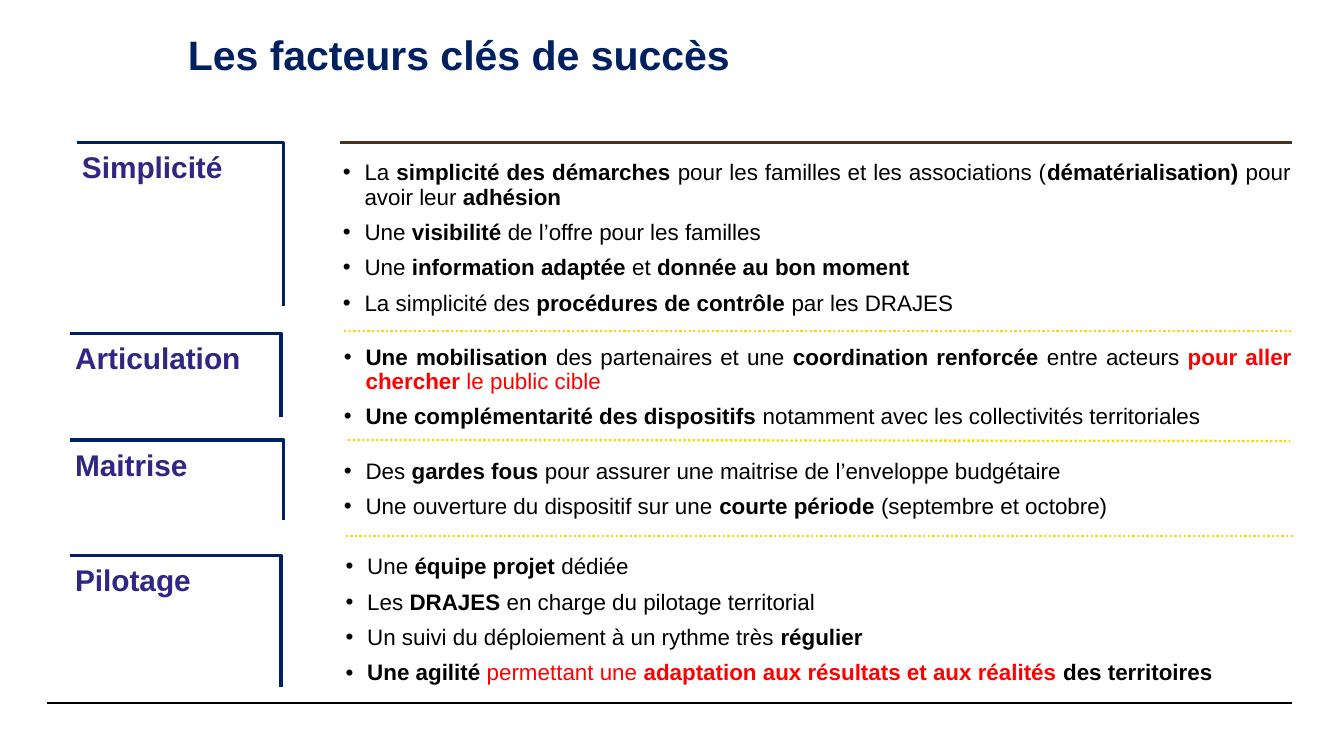
from lxml import etree
from pptx import Presentation
from pptx.dml.color import RGBColor
from pptx.enum import dml, shapes, text
from pptx.oxml.ns import qn
from pptx.util import Cm, Pt

COLOURS = {"navy": "002060", "violet": "302683", "black": "000000",
           "red": "FF0000", "yellow": "FFD500", "brown": "49311F"}

TITLE = "Les facteurs clés de succès"
TITLE_BOX = (1.98, 0.66, 13.39, 0.84)

FACTORS = [
    {"name": "Simplicité", "corner": (1.45, 2.69, 5.36, 5.79),
     "box": (6.48, 3.05, 17.91, 3.4), "points": [
        [("La ", ""), ("simplicité des démarches ", "b"),
         ("pour les familles et les associations (", ""),
         ("dématérialisation) ", "b"), ("pour avoir leur ", ""), ("adhésion", "b")],
        [("Une ", ""), ("visibilité ", "b"), ("de l’offre pour les familles", "")],
        [("Une ", ""), ("information adaptée ", "b"), ("et ", ""),
         ("donnée au bon moment", "b")],
        [("La simplicité des ", ""), ("procédures de contrôle ", "b"),
         ("par les DRAJES", "")]]},
    {"name": "Articulation", "corner": (1.32, 6.3, 5.31, 7.87),
     "box": (6.5, 6.53, 17.91, 1.6), "points": [
        [("Une mobilisation ", "b"), ("des partenaires et une ", ""),
         ("coordination renforcée ", "b"), ("entre acteurs ", ""),
         ("pour aller chercher ", "br"), ("le public cible", "r")],
        [("Une complémentarité des dispositifs ", "b"),
         ("notamment avec les collectivités territoriales", "")]]},
    {"name": "Maitrise", "corner": (1.32, 8.31, 5.36, 9.83),
     "box": (6.5, 8.69, 17.88, 1.14), "points": [
        [("Des ", ""), ("gardes fous ", "b"),
         ("pour assurer une maitrise de l’enveloppe budgétaire", "")],
        [("Une ouverture du dispositif sur une ", ""), ("courte période ", "b"),
         ("(septembre et octobre)", "")]]},
    {"name": "Pilotage", "corner": (1.32, 10.49, 5.31, 12.98),
     "box": (6.53, 10.49, 17.86, 2.49), "points": [
        [("Une ", ""), ("équipe projet ", "b"), ("dédiée", "")],
        [("Les ", ""), ("DRAJES", "b"), (" en charge du pilotage territorial", "")],
        [("Un suivi du déploiement à un rythme très ", ""), ("régulier", "b")],
        [("Une agilité ", "b"), ("permettant une ", "r"),
         ("adaptation aux résultats et aux réalités ", "br"),
         ("des territoires", "b")]]},
]

RULES = [
    ((0.89, 13.28, 24.31, 13.28), "black", 0.8, None),
    ((0.99, 13.28, 24.41, 13.28), "black", 0.8, None),
    ((6.43, 2.69, 24.41, 2.69), "brown", 1.75, None),
    ((6.5, 6.25, 24.41, 6.25), "yellow", 1.25, dml.MSO_LINE.ROUND_DOT),
    ((6.58, 8.31, 24.38, 8.33), "yellow", 1.25, dml.MSO_LINE.ROUND_DOT),
    ((6.53, 10.13, 24.43, 10.13), "yellow", 1.25, dml.MSO_LINE.ROUND_DOT),
]

NO_MARGINS = (0, 0, 0, 0)
LABEL_MARGINS = (0.1, 0.2, 0.1, 0.1)
INDENT = Cm(0.41)


def apply(target, **values):
    for key, value in values.items():
        setattr(target, key, value)


def place(shape, box):
    apply(shape, **dict(zip(("left", "top", "width", "height"), map(Cm, box))))


def set_frame(frame, margins):
    sides = ("margin_left", "margin_top", "margin_right", "margin_bottom")
    apply(frame, word_wrap=True, auto_size=text.MSO_AUTO_SIZE.NONE,
          vertical_anchor=text.MSO_ANCHOR.TOP, **dict(zip(sides, map(Cm, margins))))


def set_paragraph(paragraph, align, before=0):
    apply(paragraph, alignment=align, line_spacing=0.9,
          space_before=Pt(before), space_after=Pt(0))


def add_run(paragraph, words, size, colour, bold):
    run = paragraph.add_run()
    run.text = words
    apply(run.font, name="Arial", size=Pt(size), bold=bold)
    run.font.color.rgb = RGBColor.from_string(COLOURS[colour])


def set_line(line, colour, width):
    line.color.rgb = RGBColor.from_string(COLOURS[colour])
    line.width = Pt(width)


def add_bullet(paragraph):
    props = paragraph._p.get_or_add_pPr()
    props.set("marL", str(INDENT))
    props.set("indent", str(-INDENT))
    etree.SubElement(props, qn("a:buFont"), typeface="Arial")
    etree.SubElement(props, qn("a:buChar"), char="•")


def fill_list(body, factor):
    place(body, factor["box"])
    frame = body.text_frame
    set_frame(frame, NO_MARGINS)
    for i, point in enumerate(factor["points"]):
        paragraph = frame.add_paragraph() if i else frame.paragraphs[0]
        set_paragraph(paragraph, text.PP_ALIGN.JUSTIFY, 6 if i else 0)
        add_bullet(paragraph)
        for words, style in point:
            add_run(paragraph, words, 12, "red" if "r" in style else "black", "b" in style)


def add_corner(slide, factor):
    left, top, right, bottom = map(Cm, factor["corner"])
    builder = slide.shapes.build_freeform(left, top)
    builder.add_line_segments([(right, top), (right, bottom)], close=False)
    corner = builder.convert_to_shape()
    corner.shadow.inherit = False
    corner.fill.background()
    set_line(corner.line, "navy", 1.75)
    set_frame(corner.text_frame, LABEL_MARGINS)
    label = corner.text_frame.paragraphs[0]
    set_paragraph(label, text.PP_ALIGN.LEFT)
    add_run(label, factor["name"], 16, "violet", True)


def add_rule(slide, ends, colour, width, dash):
    rule = slide.shapes.add_connector(shapes.MSO_CONNECTOR.STRAIGHT, *map(Cm, ends))
    set_line(rule.line, colour, width)
    if dash:
        rule.line.dash_style = dash
    etree.SubElement(rule._element.spPr, qn("a:effectLst"))


def main():
    deck = Presentation()
    apply(deck, slide_width=Cm(25.4), slide_height=Cm(14.28))
    slide = deck.slides.add_slide(deck.slide_layouts.get_by_name("Comparison"))

    title, *bodies = slide.placeholders
    place(title, TITLE_BOX)
    set_frame(title.text_frame, NO_MARGINS)
    heading = title.text_frame.paragraphs[0]
    set_paragraph(heading, text.PP_ALIGN.CENTER)
    add_run(heading, TITLE, 22, "navy", True)

    for body, factor in zip(bodies, FACTORS):
        fill_list(body, factor)
        add_corner(slide, factor)
    for rule in RULES:
        add_rule(slide, *rule)

    deck.save("out.pptx")


if __name__ == "__main__":
    main()
